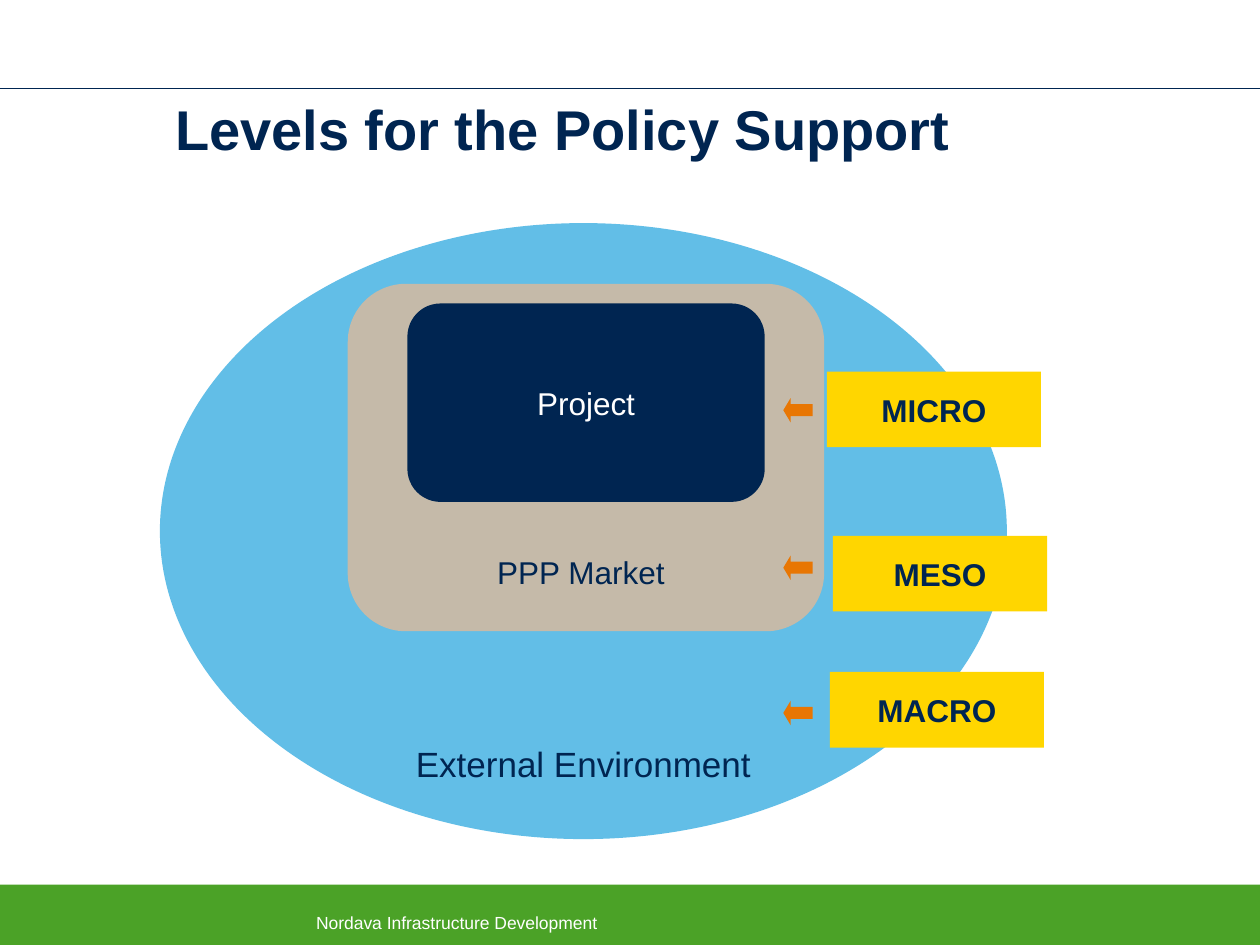
from pptx import Presentation
from pptx import util as u
from pptx.dml.color import RGBColor
from pptx.enum import shapes, text
from pptx.oxml.ns import qn
from lxml import etree

COLOURS = {
    "navy": "002551", "green": "4BA227", "sky": "62BEE7", "sand": "C5BAA9",
    "yellow": "FFD600", "orange": "E87603", "white": "FFFFFF",
}
SHAPE = shapes.MSO_SHAPE
ALIGN = text.PP_ALIGN
ANCHOR = text.MSO_ANCHOR


class SlideBuilder:
    """Draws styled elements on one slide; boxes are (left, top, width, height) in points."""

    font_name = "Arial"

    def __init__(self, slide):
        self.slide = slide

    def colour(self, name):
        return RGBColor.from_string(COLOURS[name])

    def block(self, kind, box, fill, adjustments=()):
        block = self.slide.shapes.add_shape(kind, *map(u.Pt, box))
        block.shadow.inherit = False
        block.fill.solid()
        block.fill.fore_color.rgb = self.colour(fill)
        block.line.fill.background()
        for index, value in enumerate(adjustments):
            block.adjustments[index] = value
        return block

    def rule(self, left, right, y, colour):
        rule = self.slide.shapes.add_connector(
            shapes.MSO_CONNECTOR.STRAIGHT, u.Pt(left), u.Pt(y), u.Pt(right), u.Pt(y))
        rule.line.color.rgb = self.colour(colour)
        rule.line.width = u.Pt(1)
        etree.SubElement(rule._element.spPr, qn("a:effectLst"))

    def set_text(self, holder, wording, size, colour, bold=False,
                 align=ALIGN.CENTER, anchor=ANCHOR.MIDDLE):
        frame = holder.text_frame
        frame.word_wrap = True
        frame.vertical_anchor = anchor
        frame.text = wording
        paragraph = frame.paragraphs[0]
        paragraph.alignment = align
        font = paragraph.runs[0].font
        font.name, font.size, font.bold = self.font_name, u.Pt(size), bold
        font.color.rgb = self.colour(colour)
        return frame

    def label(self, box, wording, size, colour, **style):
        holder = self.slide.shapes.add_textbox(*map(u.Pt, box))
        self.set_text(holder, wording, size, colour, **style)

    def title(self, box, wording):
        holder = self.block(SHAPE.RECTANGLE, box, "white")
        frame = self.set_text(holder, wording, 32, "navy", bold=True,
                              align=ALIGN.LEFT, anchor=ANCHOR.TOP)
        frame.margin_left = frame.margin_right = u.Pt(3.6)
        frame.margin_top = frame.margin_bottom = u.Pt(3.6)
        frame.paragraphs[0].line_spacing = 0.9

    def level(self, wording, left, top, arrow_top):
        """Adds a yellow level tag and the arrow pointing from it into the diagram."""
        tag = self.block(SHAPE.RECTANGLE, (left, top, 122.4, 43.2), "yellow")
        self.set_text(tag, wording, 18, "navy", bold=True)
        self.block(SHAPE.LEFT_ARROW, (447.6, arrow_top, 16.8, 13.8), "orange", (0.5, 0.3))


def main():
    deck = Presentation()
    deck.slide_width, deck.slide_height = u.Pt(720), u.Pt(540)
    page = SlideBuilder(deck.slides.add_slide(deck.slide_layouts[6]))

    page.block(SHAPE.RECTANGLE, (0, 505.5, 720, 34.5), "green")
    page.rule(0, 720, 50.6, "navy")
    page.label((173.5, 517.5, 442, 19), "Nordava Infrastructure Development", 10, "white",
               align=ALIGN.LEFT, anchor=ANCHOR.TOP)
    page.title((96.5, 54.7, 607.7, 42.5), "Levels for the Policy Support")

    page.block(SHAPE.OVAL, (91.4, 127.5, 484, 352), "sky")
    page.label((213.4, 420, 240, 32), "External Environment", 20, "navy")
    page.block(SHAPE.ROUNDED_RECTANGLE, (198.7, 162.2, 272.2, 198.5), "sand", (0.167,))
    page.label((242, 312, 180, 30), "PPP Market", 18, "navy")
    project = page.block(SHAPE.ROUNDED_RECTANGLE, (232.8, 173.4, 204.2, 113.4), "navy", (0.167,))
    page.set_text(project, "Project", 18, "white")

    levels = [
        ("MICRO", 472.5, 212.4, 227.5),
        ("MESO", 476, 306.2, 317.5),
        ("MACRO", 474.2, 384, 400.5),
    ]
    for level in levels:
        page.level(*level)

    deck.save("out.pptx")


if __name__ == "__main__":
    main()
